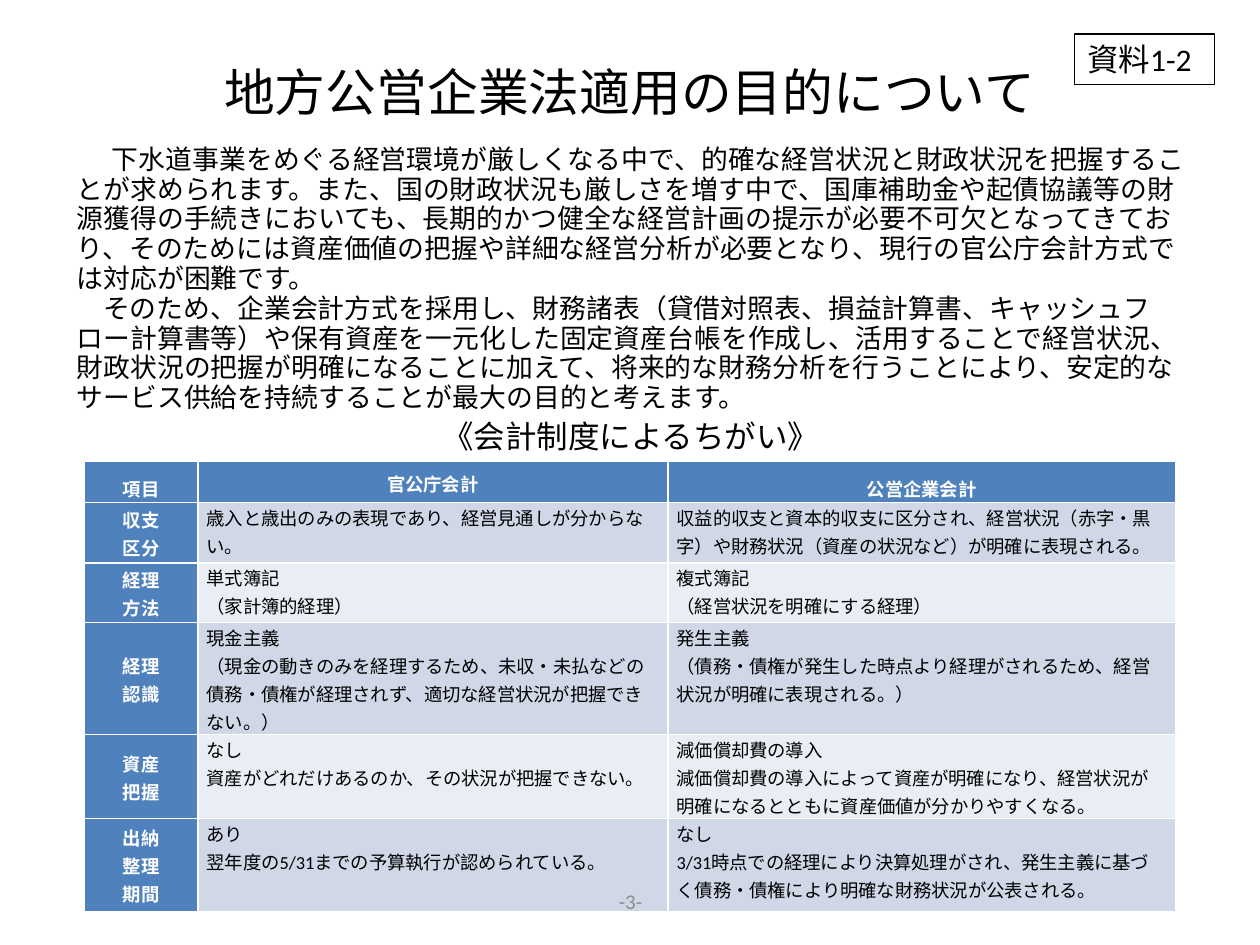
import pptx
import pptx.dml.color
import pptx.enum.shapes
import pptx.enum.text
import pptx.util

COLORS = {
    "ink": "000000",
    "white": "FFFFFF",
    "gray": "8C8C8C",
    "header": "4F81BD",
    "band_dark": "D0D8E8",
    "band_light": "E9EDF4",
}
ALIGN = pptx.enum.text.PP_ALIGN
ANCHOR = pptx.enum.text.MSO_ANCHOR
LINE = pptx.util.Pt(16)
BODY_LINE = pptx.util.Pt(17)

INTRODUCTION = [
    ("下水道事業をめぐる経営環境が厳しくなる中で、的確な経営状況と財政状況を把握することが求められます。また、国の財政状況も厳しさを増す中で、国庫補助金や起債協議等の財源獲得の手続きにおいても、長期的かつ健全な経営計画の提示が必要不可欠となってきており、そのためには資産価値の把握や詳細な経営分析が必要となり、現行の官公庁会計方式では対応が困難です。", 0.28),
    ("そのため、企業会計方式を採用し、財務諸表（貸借対照表、損益計算書、キャッシュフロー計算書等）や保有資産を一元化した固定資産台帳を作成し、活用することで経営状況、財政状況の把握が明確になることに加えて、将来的な財務分析を行うことにより、安定的なサービス供給を持続することが最大の目的と考えます。", 0.21),
]
HEADERS = [("項目", 1.5), ("官公庁会計", 1.15), ("公営企業会計", 1.5)]
COMPARISON = [
    (["収支", "区分"],
     ["歳入と歳出のみの表現であり、経営見通しが分からない。"],
     ["収益的収支と資本的収支に区分され、経営状況（赤字・黒字）や財務状況（資産の状況など）が明確に表現される。"]),
    (["経理", "方法"],
     ["単式簿記", "（家計簿的経理）"],
     ["複式簿記", "（経営状況を明確にする経理）"]),
    (["経理", "認識"],
     ["現金主義", "（現金の動きのみを経理するため、未収・未払などの債務・債権が経理されず、適切な経営状況が把握できない。）"],
     ["発生主義", "（債務・債権が発生した時点より経理がされるため、経営状況が明確に表現される。）"]),
    (["資産", "把握"],
     ["なし", "資産がどれだけあるのか、その状況が把握できない。"],
     ["減価償却費の導入", "減価償却費の導入によって資産が明確になり、経営状況が明確になるとともに資産価値が分かりやすくなる。"]),
    (["出納", "整理", "期間"],
     ["あり", "翌年度の5/31までの予算執行が認められている。"],
     ["なし", "3/31時点での経理により決算処理がされ、発生主義に基づく債務・債権により明確な財務状況が公表される。"]),
]
COLUMN_SHARES = [9, 37.3, 40.3]
ROW_SHARES = [4.4, 6.4, 6.27, 8.67, 8.4, 9.87]


def rgb(name):
    return pptx.dml.color.RGBColor.from_string(COLORS[name])


def write(frame, lines, size=18, font="Calibri", color="ink", bold=False,
          align=ALIGN.LEFT, spacing=None, indents=()):
    for index, line in enumerate(lines):
        paragraph = frame.paragraphs[0] if index == 0 else frame.add_paragraph()
        paragraph.alignment = align
        if spacing:
            paragraph.line_spacing = spacing
        if indents:
            properties = paragraph._p.get_or_add_pPr()
            properties.set("indent", str(pptx.util.Inches(indents[index])))
        run = paragraph.add_run()
        run.text = line
        run.font.size = pptx.util.Pt(size)
        run.font.name = font
        run.font.bold = bold
        run.font.color.rgb = rgb(color)


class SlideBuilder:
    def __init__(self, presentation):
        self.width = presentation.slide_width
        self.height = presentation.slide_height
        self.slide = presentation.slides.add_slide(presentation.slide_layouts[5])

    def across(self, share):
        return int(self.width * share / 100)

    def down(self, share):
        return int(self.height * share / 100)

    def area(self, left, top, width, height):
        return self.across(left), self.down(top), self.across(width), self.down(height)

    def title(self, area, text, **style):
        shape = self.slide.shapes.title
        shape.left, shape.top, shape.width, shape.height = self.area(*area)
        shape.text_frame.vertical_anchor = ANCHOR.MIDDLE
        write(shape.text_frame, [text], **style)

    def text(self, area, lines, **style):
        frame = self.slide.shapes.add_textbox(*self.area(*area)).text_frame
        frame.word_wrap = True
        frame.vertical_anchor = ANCHOR.MIDDLE
        write(frame, lines, **style)

    def label(self, area, text, **style):
        shape = self.slide.shapes.add_shape(
            pptx.enum.shapes.MSO_SHAPE.RECTANGLE, *self.area(*area))
        shape.shadow.inherit = False
        shape.fill.background()
        shape.line.color.rgb = rgb("ink")
        shape.line.width = pptx.util.Pt(0.75)
        shape.text_frame.word_wrap = False
        shape.text_frame.vertical_anchor = ANCHOR.TOP
        write(shape.text_frame, [text], **style)

    def cell(self, cell, lines, fill, anchor, **style):
        cell.fill.solid()
        cell.fill.fore_color.rgb = rgb(fill)
        cell.margin_left = cell.margin_right = pptx.util.Inches(0.07)
        cell.margin_top = cell.margin_bottom = 0
        cell.vertical_anchor = anchor
        write(cell.text_frame, lines, size=10.5, **style)

    def table(self, left, top):
        area = self.area(left, top, sum(COLUMN_SHARES), sum(ROW_SHARES))
        table = self.slide.shapes.add_table(
            len(ROW_SHARES), len(COLUMN_SHARES), *area).table
        table.first_col = True
        for column, share in zip(table.columns, COLUMN_SHARES):
            column.width = self.across(share)
        for row, share in zip(table.rows, ROW_SHARES):
            row.height = self.down(share)
        heading = {"fill": "header", "anchor": ANCHOR.MIDDLE, "color": "white",
                   "bold": True, "align": ALIGN.CENTER}
        for column, (text, spacing) in enumerate(HEADERS):
            self.cell(table.cell(0, column), [text], spacing=spacing, **heading)
        for row, (item, *descriptions) in enumerate(COMPARISON, 1):
            self.cell(table.cell(row, 0), item, spacing=LINE, **heading)
            band = "band_dark" if row % 2 else "band_light"
            for column, lines in enumerate(descriptions, 1):
                self.cell(table.cell(row, column), lines, band, ANCHOR.TOP, spacing=LINE)


def main():
    presentation = pptx.Presentation()
    presentation.slide_width = pptx.util.Inches(10)
    presentation.slide_height = pptx.util.Inches(7.5)
    builder = SlideBuilder(presentation)
    builder.title((5, 4, 90, 11.33), "地方公営企業法適用の目的について",
                  size=29, align=ALIGN.CENTER)
    builder.table(6.7, 48.8)
    paragraphs, indents = zip(*INTRODUCTION)
    builder.text((5.1, 15.33, 90.6, 28.4), paragraphs, size=15.3, font="Arial",
                 spacing=BODY_LINE, indents=indents)
    builder.text((34.2, 92.67, 31.7, 5.33), ["-3-"], size=12, color="gray",
                 align=ALIGN.CENTER)
    builder.text((6.8, 43.73, 86.5, 5.73), ["《会計制度によるちがい》"],
                 align=ALIGN.CENTER, spacing=BODY_LINE)
    builder.label((85.3, 3.6, 11.1, 5.33), "資料1-2")
    presentation.save("out.pptx")


if __name__ == "__main__":
    main()
